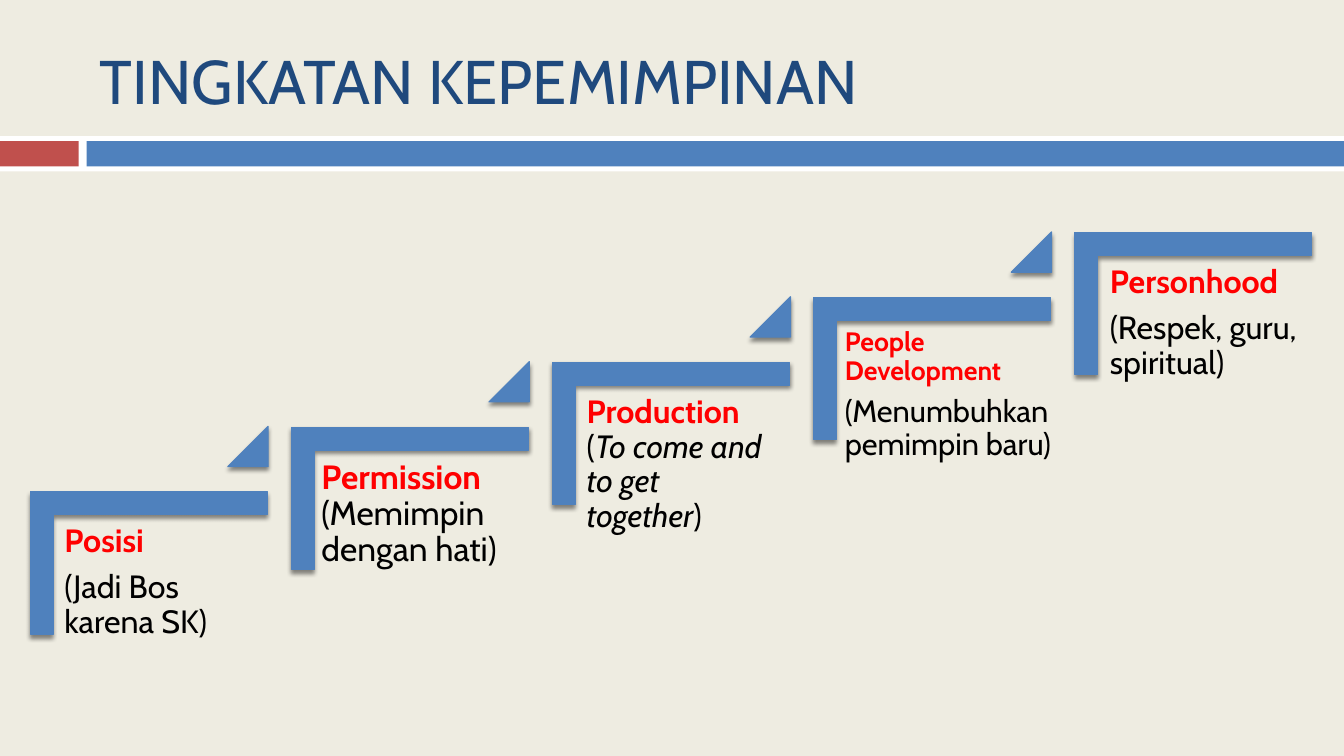
import pptx
import pptx.util
import pptx.dml.color
import pptx.enum.shapes
import pptx.enum.text
import pptx.oxml
import pptx.oxml.ns

Inches, Pt = pptx.util.Inches, pptx.util.Pt
PRESET = pptx.enum.shapes.MSO_SHAPE
ANCHOR = pptx.enum.text.MSO_ANCHOR

FONT = "Cabin"
BLUE, NAVY, RED_BAR = "4F81BD", "1F497D", "C0504D"
CREAM, WHITE, RED, BLACK = "EEECE1", "FFFFFF", "FF0000", "000000"

RUN, RISE = 2.59, 0.643  # offset from one stair to the next

# Text left, width and inset, then paragraphs of (text, size, colour, italic) runs
LEVELS = [
    (0.54, 2.12, 0.1, [[("Posisi", 23, RED, False)],
                       [("(Jadi Bos karena SK)", 23, BLACK, False)]]),
    (3.09, 2.2, 0.1, [[("Permission ", 24, RED, False),
                       ("(Memimpin dengan hati)", 24, BLACK, False)]]),
    (5.72, 2.12, 0.1, [[("Production ", 23, RED, False),
                        ("(", 23, BLACK, False),
                        ("To come and to get together", 23, BLACK, True),
                        (")", 23, BLACK, False)]]),
    (8.3, 2.47, 0.08, [[("People Development", 19, RED, False)],
                       [("(Menumbuhkan pemimpin baru)", 22, BLACK, False)]]),
    (10.91, 2.12, 0.1, [[("Personhood", 23, RED, False)],
                        [("(Respek, guru, spiritual)", 23, BLACK, False)]]),
]


def paint(fill, colour):
    fill.solid()
    fill.fore_color.rgb = pptx.dml.color.RGBColor.from_string(colour)


def add_run(paragraph, text, size, colour, bold=False, italic=False):
    run = paragraph.add_run()
    run.text = text
    run.font.name = FONT
    run.font.size = Pt(size)
    run.font.bold = bold
    run.font.italic = italic
    paint(run.font.fill, colour)


def add_title(slide, text):
    title = slide.shapes.title
    title.left, title.top = Inches(0.89), Inches(0.25)
    title.width, title.height = Inches(11.89), Inches(1.08)
    title.text_frame.vertical_anchor = ANCHOR.MIDDLE
    heading = title.text_frame.paragraphs[0]
    heading.alignment = pptx.enum.text.PP_ALIGN.LEFT
    add_run(heading, text, 44, NAVY)


def add_preset(slide, preset, left, top, width, height, colour):
    shape = slide.shapes.add_shape(
        preset, Inches(left), Inches(top), Inches(width), Inches(height))
    paint(shape.fill, colour)
    shape.line.fill.background()
    shape.shadow.inherit = False
    return shape


def outline_and_shade(shape):
    """Give a stair part its thin outline and soft drop shadow."""
    paint(shape.line.fill, BLUE)
    shape.line.width = Pt(0.79)
    effects = shape._element.spPr.find(pptx.oxml.ns.qn("a:effectLst"))
    effects.append(pptx.oxml.parse_xml(
        f'<a:outerShdw {pptx.oxml.ns.nsdecls("a")} blurRad="{Pt(3)}" '
        f'dist="{Pt(2.4)}" dir="5400000" rotWithShape="0">'
        f'<a:srgbClr val="{BLACK}"><a:alpha val="45000"/></a:srgbClr>'
        '</a:outerShdw>'))


def add_stair(slide, level):
    corner = add_preset(slide, PRESET.CORNER, 0.77 + level * RUN,
                        4.41 - level * RISE, 1.41, 2.35, BLUE)
    corner.rotation = 90
    corner.adjustments[0] = corner.adjustments[1] = 0.161
    outline_and_shade(corner)


def add_rise_marker(slide, level):
    marker = add_preset(slide, PRESET.ISOSCELES_TRIANGLE, 2.26 + level * RUN,
                        4.23 - level * RISE, 0.4, 0.4, BLUE)
    marker.adjustments[0] = 1
    outline_and_shade(marker)


def add_level_text(slide, level, left, width, inset, paragraphs):
    box = slide.shapes.add_textbox(Inches(left), Inches(5.11 - level * RISE),
                                   Inches(width), Inches(1.86))
    frame = box.text_frame
    frame.word_wrap = True
    frame.vertical_anchor = ANCHOR.TOP
    frame.margin_left = frame.margin_right = Inches(inset)
    frame.margin_top = frame.margin_bottom = Inches(inset)
    for index, runs in enumerate(paragraphs):
        paragraph = frame.add_paragraph() if index else frame.paragraphs[0]
        paragraph.line_spacing = 0.9
        paragraph.space_after = Pt(round(0.35 * runs[0][1]))
        for text, size, colour, italic in runs:
            add_run(paragraph, text, size, colour, colour == RED, italic)


def main():
    deck = pptx.Presentation()
    deck.slide_width, deck.slide_height = Inches(13.33), Inches(7.5)
    slide = deck.slides.add_slide(deck.slide_layouts[5])
    paint(slide.background.fill, CREAM)

    add_preset(slide, PRESET.RECTANGLE, 0, 1.35, 13.33, 0.35, WHITE)
    add_preset(slide, PRESET.RECTANGLE, 0, 1.4, 0.78, 0.25, RED_BAR)
    add_preset(slide, PRESET.RECTANGLE, 0.86, 1.4, 12.47, 0.25, BLUE)
    add_title(slide, "TINGKATAN KEPEMIMPINAN")

    for level, content in enumerate(LEVELS):
        add_stair(slide, level)
        add_level_text(slide, level, *content)
        if level < len(LEVELS) - 1:
            add_rise_marker(slide, level)

    deck.save("out.pptx")


if __name__ == "__main__":
    main()
